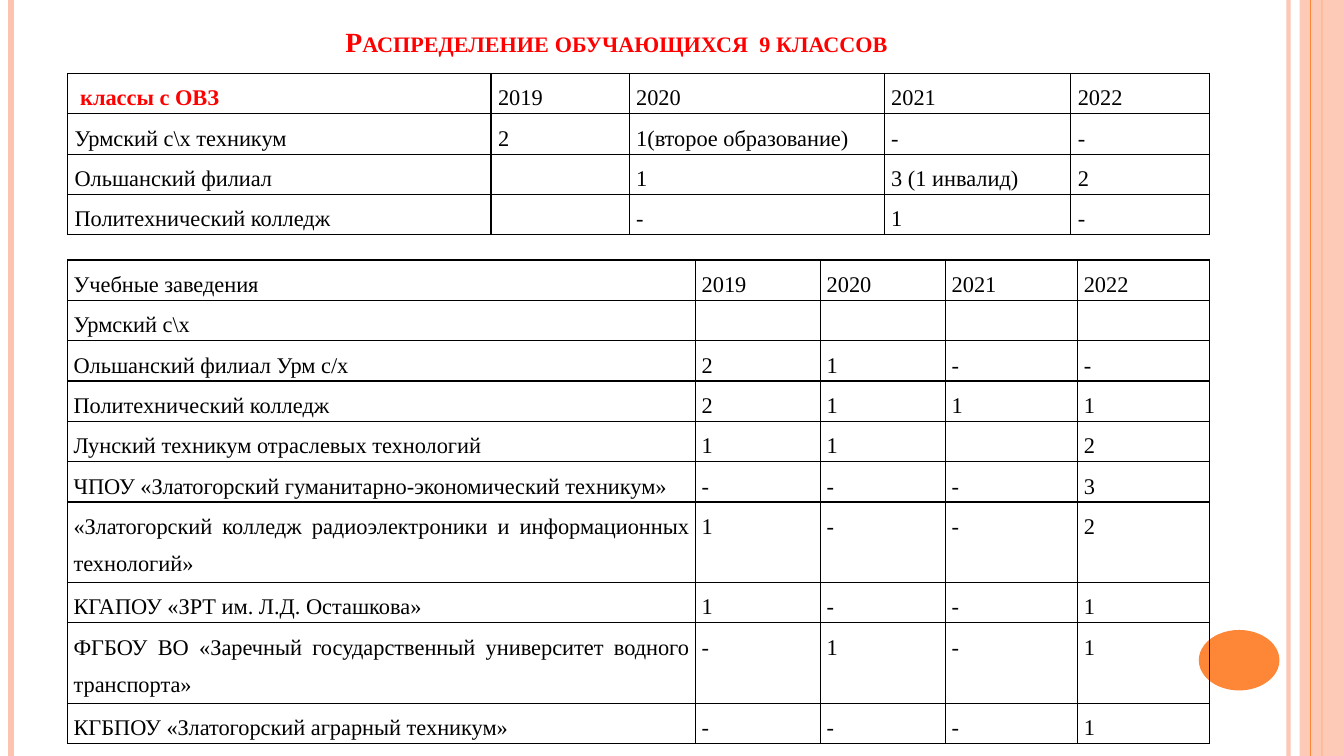
from lxml import etree
from pptx import Presentation
from pptx.dml.color import RGBColor
from pptx.enum import shapes, text
from pptx.oxml.ns import qn
from pptx.util import Inches, Pt

COLORS = {"peach": "FEC3AE", "orange": "FE8637", "red": "FF0000", "black": "000000"}
FONT = "Times New Roman"

OVZ_ROWS = [
    [" классы с ОВЗ", "2019", "2020", "2021", "2022"],
    ["Урмский с\\х техникум", "2", "1(второе образование)", "-", "-"],
    ["Ольшанский филиал", "", "1", "3 (1 инвалид)", "2"],
    ["Политехнический колледж", "", "-", "1", "-"],
]
SCHOOL_ROWS = [
    ["Учебные заведения", "2019", "2020", "2021", "2022"],
    ["Урмский с\\х", "", "", "", ""],
    ["Ольшанский филиал Урм с/х", "2", "1", "-", "-"],
    ["Политехнический колледж", "2", "1", "1", "1"],
    ["Лунский техникум отраслевых технологий", "1", "1", "", "2"],
    ["ЧПОУ «Златогорский гуманитарно-экономический техникум»", "-", "-", "-", "3"],
    ["«Златогорский колледж радиоэлектроники и информационных технологий»",
     "1", "-", "-", "2"],
    ["КГАПОУ «ЗРТ им. Л.Д. Осташкова»", "1", "-", "-", "1"],
    ["ФГБОУ ВО «Заречный государственный университет водного транспорта»",
     "-", "1", "-", "1"],
    ["КГБПОУ «Златогорский аграрный техникум»", "-", "-", "-", "1"],
]


def rgb(name):
    return RGBColor.from_string(COLORS[name])


def write(paragraph, words, size=16, color="black", bold=False, small_caps=False,
          align=text.PP_ALIGN.JUSTIFY, spacing=1.5):
    paragraph.alignment = align
    paragraph.line_spacing = spacing
    run = paragraph.add_run()
    run.text = words
    run.font.name = FONT
    run.font.size = Pt(size)
    run.font.bold = bold
    run.font.color.rgb = rgb(color)
    if small_caps:
        run.font._element.set("cap", "small")
    # The paragraph end takes the same font, so it does not stretch the line
    end = etree.SubElement(paragraph._p, qn("a:endParaRPr"), sz=str(round(size * 100)))
    etree.SubElement(end, qn("a:latin"), typeface=FONT)


def set_alpha(shape, percent):
    for color in shape._element.spPr.iter(qn("a:srgbClr")):
        etree.SubElement(color, qn("a:alpha")).set("val", str(percent * 1000))


def add_stripe(slide, x, height, color, width, alpha=100):
    line = slide.shapes.add_connector(
        shapes.MSO_CONNECTOR.STRAIGHT, Inches(x), 0, Inches(x), Inches(height))
    line.line.color.rgb = rgb(color)
    line.line.width = Pt(width)
    etree.SubElement(line._element.spPr, qn("a:effectLst"))
    if alpha < 100:
        set_alpha(line, alpha)


def add_block(slide, kind, box, color, alpha=100):
    shape = slide.shapes.add_shape(kind, *map(Inches, box))
    shape.shadow.inherit = False
    shape.fill.solid()
    shape.fill.fore_color.rgb = rgb(color)
    shape.line.fill.background()
    if alpha < 100:
        set_alpha(shape, alpha)


def add_decoration(slide, box):
    left, top, width, height = box
    right = left + width
    add_stripe(slide, right - 0.55, height, "peach", 3, 93)
    add_stripe(slide, left + 0.11, height, "peach", 4.5)
    add_stripe(slide, right - 0.22, height, "orange", 1.5)
    add_block(slide, shapes.MSO_SHAPE.RECTANGLE,
              (right - 0.44, top, 0.44, height), "peach", 87)
    add_stripe(slide, right - 0.33, height, "orange", 0.75)
    add_block(slide, shapes.MSO_SHAPE.OVAL,
              (right - 1.44, top + 6.25, 0.8, 0.6), "orange")


def add_title(slide, box, words):
    frame = slide.shapes.add_textbox(*map(Inches, box)).text_frame
    frame.word_wrap = True
    frame.vertical_anchor = text.MSO_ANCHOR.BOTTOM
    write(frame.paragraphs[0], words, size=19.8, color="red", bold=True,
          small_caps=True, align=text.PP_ALIGN.CENTER, spacing=1)


def add_borders(cell):
    properties = cell._tc.get_or_add_tcPr()
    for side in ("lnL", "lnR", "lnT", "lnB"):
        border = etree.SubElement(properties, qn("a:" + side), w=str(Pt(1)))
        fill = etree.SubElement(border, qn("a:solidFill"))
        etree.SubElement(fill, qn("a:srgbClr"), val=COLORS["black"])


def add_grid(slide, box, rows, widths, heights, margin, corner=None):
    """Bordered table; corner holds extra format for the top left cell."""
    table = slide.shapes.add_table(
        len(rows), len(widths), *map(Inches, box)).table
    table.first_row = table.horz_banding = False
    for column, width in zip(table.columns, widths):
        column.width = Inches(width)
    for row, height in zip(table.rows, heights):
        row.height = Inches(height)
    for row_index, row in enumerate(rows):
        for column_index, words in enumerate(row):
            cell = table.cell(row_index, column_index)
            cell.margin_left = cell.margin_right = Inches(margin)
            cell.margin_top = cell.margin_bottom = 0
            add_borders(cell)
            cell.fill.background()
            if words:
                is_corner = row_index == column_index == 0
                style = corner if corner and is_corner else {}
                write(cell.text_frame.paragraphs[0], words, **style)


def main():
    presentation = Presentation()
    presentation.slide_width = Inches(13.33)
    presentation.slide_height = Inches(7.5)
    slide = presentation.slides.add_slide(presentation.slide_layouts[6])

    # Side stripes and circle
    add_decoration(slide, (0, 0, 13.33, 7.5))

    # Heading
    add_title(slide, (0.67, 0.3, 10.89, 0.33), "Распределение обучающихся  9 классов")

    # Classes for pupils with special needs
    add_grid(slide, (0.67, 0.73, 11.32, 1.48), OVZ_ROWS,
             (4.2, 1.37, 2.53, 1.85, 1.38), [0.37] * len(OVZ_ROWS), 0.07,
             corner={"color": "red", "bold": True})

    # Schools; the long names take two lines
    heights = [0.78 if len(row[0]) > 60 else 0.39 for row in SCHOOL_ROWS]
    add_grid(slide, (0.67, 2.58, 11.32, 4.68), SCHOOL_ROWS,
             (6.23, 1.24, 1.24, 1.31, 1.31), heights, 0.06)

    presentation.save("out.pptx")


if __name__ == "__main__":
    main()
